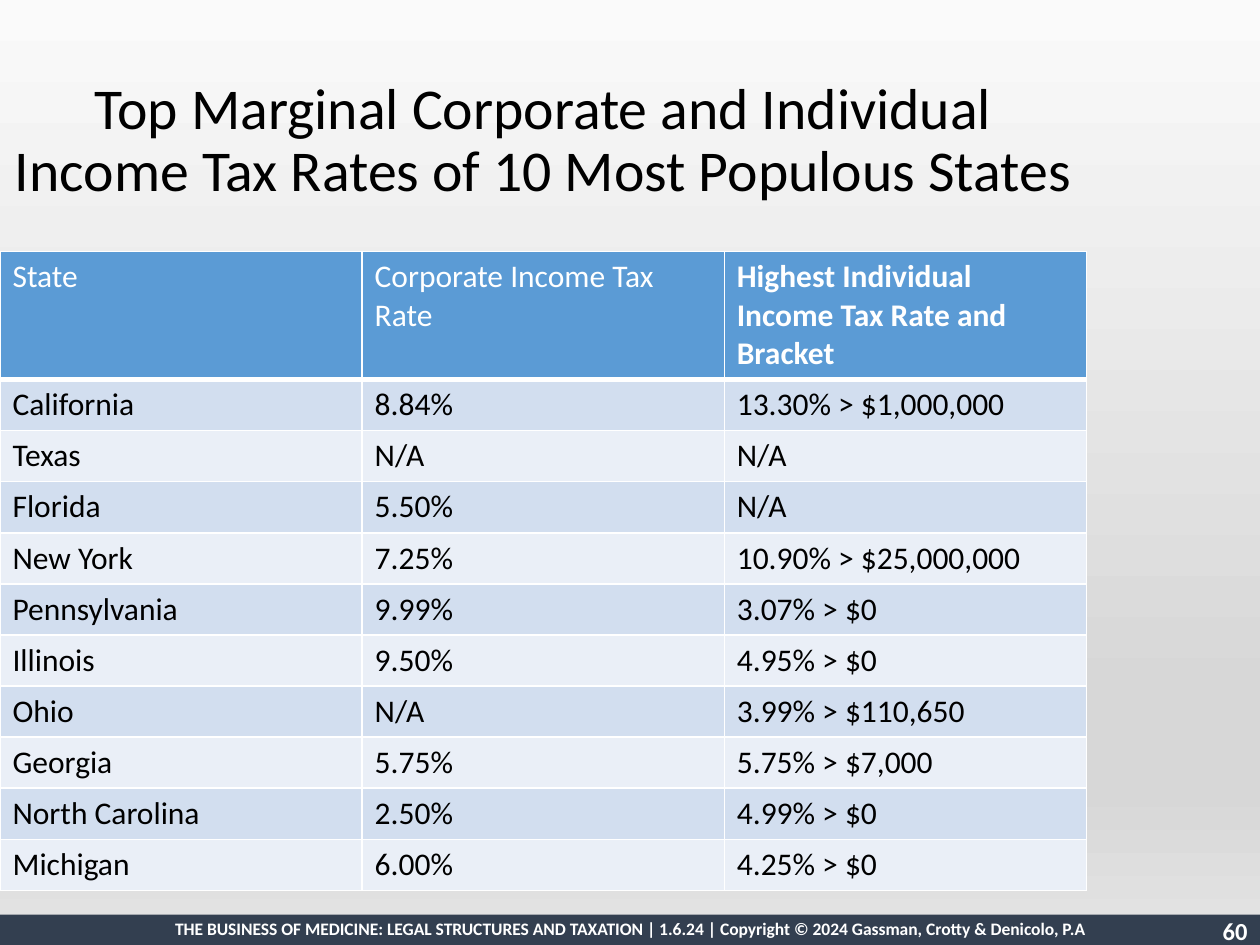
from lxml import etree
from pptx import Presentation
from pptx.dml.color import RGBColor
from pptx.enum.shapes import MSO_SHAPE
from pptx.enum.text import MSO_ANCHOR, PP_ALIGN
from pptx.oxml.ns import qn
from pptx.util import Cm, Pt

RECT = MSO_SHAPE.RECTANGLE
MIDDLE = MSO_ANCHOR.MIDDLE
CENTER, RIGHT = PP_ALIGN.CENTER, PP_ALIGN.RIGHT
FONT = "Calibri"
COLORS = {
    "bar": "333F50", "white": "FFFFFF", "black": "000000",
    "header": "5B9BD5", "band1": "D2DEEF", "band2": "EAEFF7",
}
BACKGROUND = [(0, "FAFAFA"), (74, "D7D7D7"), (83, "D7D7D7"), (100, "E4E4E4")]
ROWS = [
    ("State", "Corporate Income Tax Rate", "Highest Individual Income Tax Rate and Bracket"),
    ("California", "8.84%", "13.30% > $1,000,000"),
    ("Texas", "N/A", "N/A"),
    ("Florida", "5.50%", "N/A"),
    ("New York", "7.25%", "10.90% > $25,000,000"),
    ("Pennsylvania", "9.99%", "3.07% > $0"),
    ("Illinois", "9.50%", "4.95% > $0"),
    ("Ohio", "N/A", "3.99% > $110,650"),
    ("Georgia", "5.75%", "5.75% > $7,000"),
    ("North Carolina", "2.50%", "4.99% > $0"),
    ("Michigan", "6.00%", "4.25% > $0"),
]


def write(tf, text, size, color, bold=False, align=None):
    tf.text = text
    tf.word_wrap = True
    p = tf.paragraphs[0]
    p.alignment = align
    font = p.runs[0].font
    font.name, font.size, font.bold = FONT, Pt(size), bold
    font.color.rgb = RGBColor.from_string(COLORS[color])


def add_border(cell, side, width):
    ln = etree.SubElement(cell._tc.get_or_add_tcPr(), qn(f"a:ln{side}"), w=str(Pt(width)))
    fill = etree.SubElement(ln, qn("a:solidFill"))
    etree.SubElement(fill, qn("a:srgbClr"), val=COLORS["white"])


prs = Presentation()
prs.slide_width, prs.slide_height = Cm(25.4), Cm(19.05)
s = prs.slides.add_slide(prs.slide_layouts[5])

# Background gradient, top to bottom
bg = s.background.fill
bg.gradient()
bg.gradient_angle = 270
stops = next(s.element.iter(qn("a:gsLst")))
for stop in list(stops):
    stops.remove(stop)
for pos, color in BACKGROUND:
    stop = etree.SubElement(stops, qn("a:gs"), pos=str(pos * 1000))
    etree.SubElement(stop, qn("a:srgbClr"), val=color)

# Footer bar, slide number and footer text
bar = s.shapes.add_shape(RECT, 0, Cm(18.44), prs.slide_width, Cm(0.61))
bar.shadow.inherit = False
bar.fill.solid()
bar.fill.fore_color.rgb = RGBColor.from_string(COLORS["bar"])
bar.line.fill.background()

number = s.shapes.add_textbox(Cm(20.78), Cm(18.34), Cm(4.62), Cm(1.02))
write(number.text_frame, "60", 14, "white", True, RIGHT)
footer = s.shapes.add_textbox(Cm(1.78), Cm(18.39), Cm(21.84), Cm(0.68))
write(footer.text_frame,
      "THE BUSINESS OF MEDICINE: LEGAL STRUCTURES AND TAXATION | 1.6.24 | "
      "Copyright © 2024 Gassman, Crotty & Denicolo, P.A",
      10, "white", True, CENTER)

# Title
title = s.shapes.title
title.left, title.top, title.width, title.height = 0, Cm(1.02), Cm(21.9), Cm(3.68)
tf = title.text_frame
write(tf, "Top Marginal Corporate and Individual Income Tax Rates of 10 Most Populous States",
      33, "black", align=CENTER)
tf.vertical_anchor = MIDDLE
tf.paragraphs[0].line_spacing = 0.9

# Tax rate table
table = s.shapes.add_table(len(ROWS), 3, 0, Cm(5.07), Cm(21.9), Cm(12.9)).table
for col in table.columns:
    col.width = Cm(7.3)
for i, values in enumerate(ROWS):
    header = i == 0
    table.rows[i].height = Cm(2.58 if header else 1.03)
    fill = "header" if header else "band1" if i % 2 else "band2"
    for j, value in enumerate(values):
        cell = table.cell(i, j)
        write(cell.text_frame, value, 18, "white" if header else "black", header and j == 2)
        for side in "LRTB":
            add_border(cell, side, 3 if header and side == "B" else 1)
        cell.fill.solid()
        cell.fill.fore_color.rgb = RGBColor.from_string(COLORS[fill])

prs.save("out.pptx")
